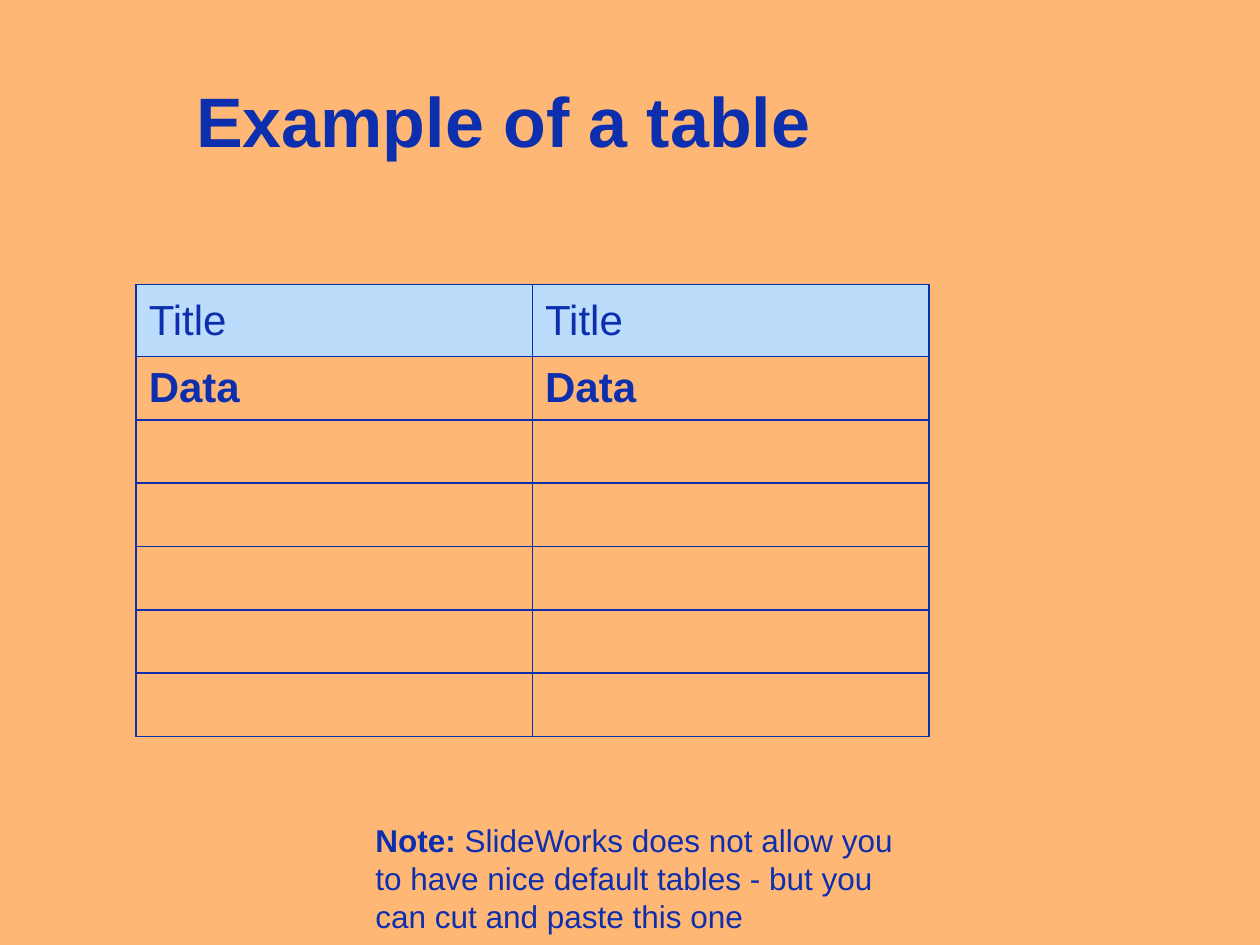
from dataclasses import dataclass

from lxml import etree
from pptx import Presentation
from pptx.dml.color import RGBColor
from pptx.enum.text import MSO_ANCHOR, MSO_AUTO_SIZE, PP_ALIGN
from pptx.oxml.ns import qn
from pptx.util import Pt

MIDDLE = MSO_ANCHOR.MIDDLE
CENTER = PP_ALIGN.CENTER
LEFT = PP_ALIGN.LEFT

FONT = "Arial"
PEACH = "FFB775"
NAVY = "0E2FAD"
SKY = "BBDDFB"


@dataclass
class TableRow:
    height: float
    texts: tuple[str, str] = ("", "")
    bold: bool = False
    fill: str | None = None


ROWS = [
    TableRow(41, ("Title", "Title"), fill=SKY),
    TableRow(36.2, ("Data", "Data"), bold=True),
    *[TableRow(36.2)] * 5,
]
COLUMN_WIDTH = 226.5


def color(hex_code: str) -> RGBColor:
    return RGBColor.from_string(hex_code)


def add_text(paragraph, text: str, *, size: float, bold: bool = False,
             align=LEFT) -> None:
    paragraph.alignment = align
    run = paragraph.add_run()
    run.text = text
    run.font.name = FONT
    run.font.size = Pt(size)
    run.font.bold = bold
    run.font.color.rgb = color(NAVY)


def add_borders(cell, hex_code: str, width: float) -> None:
    properties = cell._tc.get_or_add_tcPr()
    # Border elements must come before the cell fill
    for position, side in enumerate(("a:lnL", "a:lnR", "a:lnT", "a:lnB")):
        border = etree.Element(qn(side), w=str(Pt(width)))
        solid = etree.SubElement(border, qn("a:solidFill"))
        etree.SubElement(solid, qn("a:srgbClr"), val=hex_code)
        properties.insert(position, border)


def add_example_table(slide, left: float, top: float, rows: list[TableRow]) -> None:
    column_count = len(rows[0].texts)
    table = slide.shapes.add_table(
        len(rows), column_count, Pt(left), Pt(top),
        Pt(COLUMN_WIDTH * column_count), Pt(sum(row.height for row in rows)),
    ).table
    table.first_row = False
    table.horz_banding = False
    for column in table.columns:
        column.width = Pt(COLUMN_WIDTH)
    for row_index, row in enumerate(rows):
        table.rows[row_index].height = Pt(row.height)
        for column_index, text in enumerate(row.texts):
            cell = table.cell(row_index, column_index)
            cell.vertical_anchor = MIDDLE
            if row.fill:
                cell.fill.solid()
                cell.fill.fore_color.rgb = color(row.fill)
            else:
                cell.fill.background()
            add_borders(cell, NAVY, 1)
            if text:
                add_text(cell.text_frame.paragraphs[0], text, size=24, bold=row.bold)


def main() -> None:
    presentation = Presentation()
    presentation.slide_width, presentation.slide_height = Pt(720), Pt(540)
    slide = presentation.slides.add_slide(presentation.slide_layouts[5])
    slide.background.fill.solid()
    slide.background.fill.fore_color.rgb = color(PEACH)

    # Title
    title = slide.shapes.title
    title.left, title.top, title.width, title.height = Pt(36), Pt(20.2), Pt(503.3), Pt(96.5)
    title.text_frame.vertical_anchor = MIDDLE
    add_text(title.text_frame.paragraphs[0], "Example of a table",
             size=40, bold=True, align=CENTER)

    # Table
    add_example_table(slide, 77.8, 162.7, ROWS)

    # Note below the table
    note = slide.shapes.add_textbox(Pt(207.4), Pt(465.8), Pt(323.3), Pt(72)).text_frame
    note.word_wrap = True
    note.auto_size = MSO_AUTO_SIZE.SHAPE_TO_FIT_TEXT
    note_line = note.paragraphs[0]
    add_text(note_line, "Note: ", size=18, bold=True)
    add_text(note_line, "SlideWorks does not allow you to have nice default tables"
             " - but you can cut and paste this one", size=18)

    presentation.save("out.pptx")


if __name__ == "__main__":
    main()
